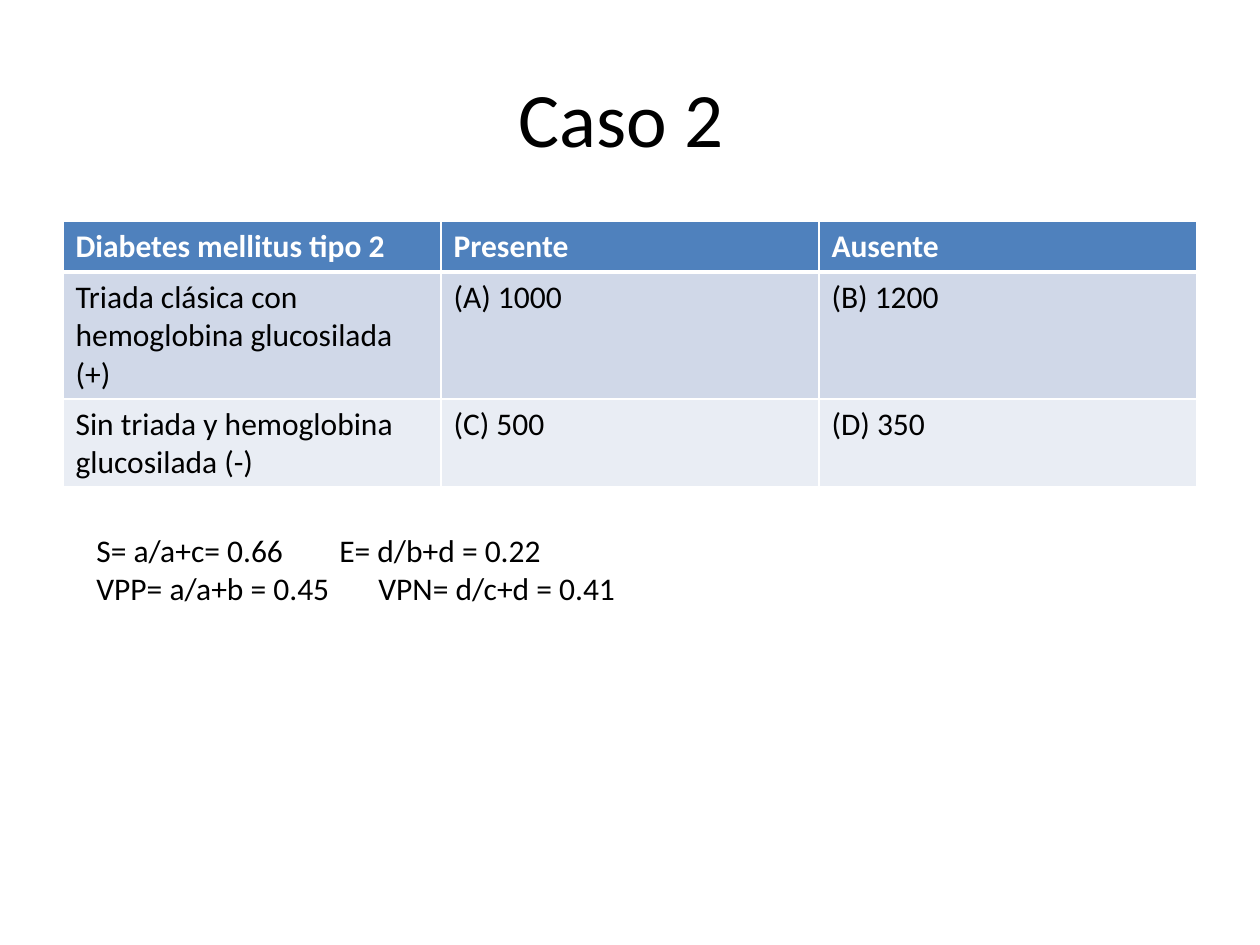
from lxml.etree import SubElement
from pptx import Presentation
from pptx.dml.color import RGBColor
from pptx.enum.text import MSO_ANCHOR, PP_ALIGN
from pptx.oxml.ns import qn
from pptx.util import Pt

PX = 914400 // 126
COLORS = {
    "text": "000000",
    "white": "FFFFFF",
    "header": "4F81BD",
    "odd_row": "D0D8E8",
    "even_row": "E9EDF4",
}


def write(frame, *lines, size=18, color="text", bold=False,
          align=PP_ALIGN.LEFT, anchor=MSO_ANCHOR.TOP, tabs=()):
    """Fill a text frame, one paragraph per line; tabs holds one stop per line."""
    frame.word_wrap = True
    frame.vertical_anchor = anchor
    for i, line in enumerate(lines):
        paragraph = frame.paragraphs[0] if i == 0 else frame.add_paragraph()
        paragraph.alignment = align
        run = paragraph.add_run()
        run.text = line
        run.font.name = "Calibri"
        run.font.size = Pt(size)
        run.font.bold = bold
        run.font.color.rgb = RGBColor.from_string(COLORS[color])
        if tabs:
            stops = SubElement(paragraph._p.get_or_add_pPr(), qn("a:tabLst"))
            SubElement(stops, qn("a:tab"), pos=str(tabs[i] * PX), algn="l")


def set_borders(cell, bottom):
    """Draw white 1 pt cell borders, with the bottom one in its own width."""
    properties = cell._tc.get_or_add_tcPr()
    widths = {"a:lnL": 1, "a:lnR": 1, "a:lnT": 1, "a:lnB": bottom}
    for position, (tag, width) in enumerate(widths.items()):
        line = SubElement(properties, qn(tag), w=str(Pt(width)))
        fill = SubElement(line, qn("a:solidFill"))
        SubElement(fill, qn("a:srgbClr"), val=COLORS["white"])
        properties.insert(position, line)


prs = Presentation()
prs.slide_width = 1260 * PX
prs.slide_height = 945 * PX
slide = prs.slides.add_slide(prs.slide_layouts[6])

title = slide.shapes.add_textbox(63 * PX, 38 * PX, 1134 * PX, 157 * PX)
write(title.text_frame, "Caso 2 ", size=44,
      align=PP_ALIGN.CENTER, anchor=MSO_ANCHOR.MIDDLE)

# Fill, row height and cell texts of each row
diagnosis_rows = [
    ("header", 51, ["Diabetes mellitus tipo 2", "Presente", "Ausente"]),
    ("odd_row", 127, ["Triada clásica con hemoglobina glucosilada (+)",
                      "(A) 1000", "(B) 1200"]),
    ("even_row", 88, ["Sin triada y hemoglobina glucosilada (-)",
                      "(C) 500", "(D) 350"]),
]
diagnosis = slide.shapes.add_table(
    3, 3, 63 * PX, 221 * PX, 1134 * PX, 266 * PX).table
for r, (fill, height, texts) in enumerate(diagnosis_rows):
    diagnosis.rows[r].height = height * PX
    is_header = fill == "header"
    for c, text in enumerate(texts):
        cell = diagnosis.cell(r, c)
        cell.fill.solid()
        cell.fill.fore_color.rgb = RGBColor.from_string(COLORS[fill])
        set_borders(cell, bottom=3 if is_header else 1)
        write(cell.text_frame, text, bold=is_header,
              color="white" if is_header else "text")

results = slide.shapes.add_textbox(84 * PX, 525 * PX, 1113 * PX, 89 * PX)
write(results.text_frame,
      "S= a/a+c= 0.66\tE= d/b+d = 0.22",
      "VPP= a/a+b = 0.45\tVPN= d/c+d = 0.41",
      tabs=(243, 282))

prs.save("out.pptx")
